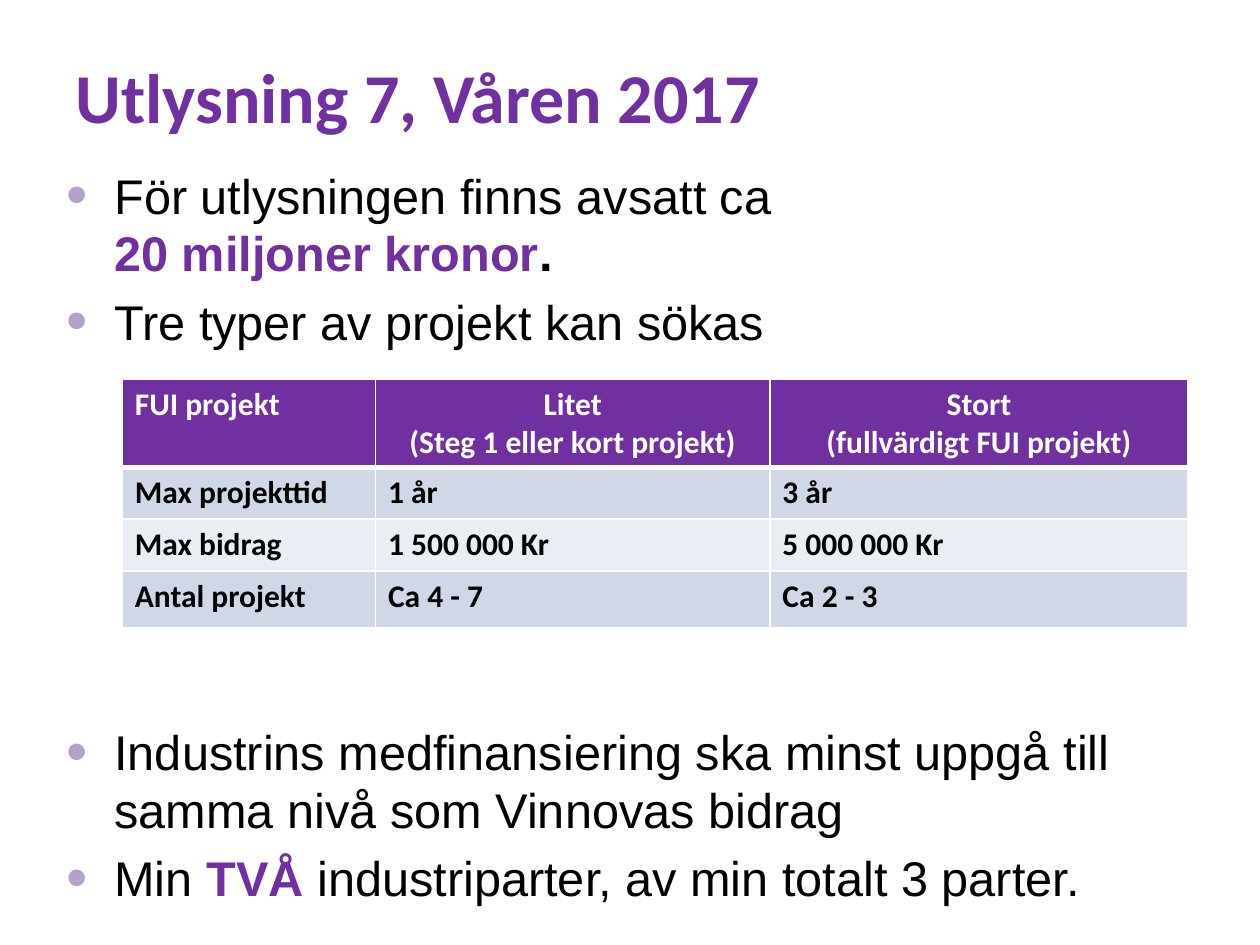
from lxml import etree
from pptx import Presentation
from pptx.dml.color import RGBColor
from pptx.enum.text import MSO_ANCHOR as ANCHOR, PP_ALIGN as ALIGN
from pptx.oxml.ns import qn
from pptx.util import Inches, Pt

COLS, ROWS = 100, 75
PURPLE, LILAC, BLACK, WHITE = "7030A0", "B3A2C7", "000000", "FFFFFF"
BANDS = ["D0D8E8", "E9EDF4"]


def color(value):
    return RGBColor.from_string(value)


def add_text(p, text, size=18, font="Calibri", fill=BLACK, bold=False):
    for i, line in enumerate(text.split("\n")):
        if i:
            p.add_line_break()
        if line:
            r = p.add_run()
            r.text = line
            r.font.size, r.font.name, r.font.bold = Pt(size), font, bold
            r.font.color.rgb = color(fill)


def add_bullet(p, indent):
    pPr = p._p.get_or_add_pPr()
    pPr.set("marL", str(indent))
    pPr.set("indent", str(-indent))
    clr = etree.SubElement(pPr, qn("a:buClr"))
    etree.SubElement(clr, qn("a:srgbClr"), val=LILAC)
    etree.SubElement(pPr, qn("a:buSzPct"), val="125000")
    etree.SubElement(pPr, qn("a:buFont"), typeface="Arial")
    etree.SubElement(pPr, qn("a:buChar"), char="•")


def add_borders(cell, **widths):
    tcPr = cell._tc.get_or_add_tcPr()
    for side in "LRTB":
        ln = etree.SubElement(tcPr, qn(f"a:ln{side}"), w=str(Pt(widths.get(side, 1))))
        fill = etree.SubElement(ln, qn("a:solidFill"))
        etree.SubElement(fill, qn("a:srgbClr"), val=WHITE)


class Deck:
    def __init__(self, width=10, height=7.5):
        self.prs = Presentation()
        self.prs.slide_width, self.prs.slide_height = Inches(width), Inches(height)
        self.slide = self.prs.slides.add_slide(self.prs.slide_layouts[5])

    def x(self, cols):
        return round(self.prs.slide_width * cols / COLS)

    def y(self, rows):
        return round(self.prs.slide_height * rows / ROWS)

    def box(self, left, top, width, height):
        return self.x(left), self.y(top), self.x(width), self.y(height)

    def title(self, text, *place):
        sp = self.slide.shapes.title
        sp.left, sp.top, sp.width, sp.height = self.box(*place)
        tf = sp.text_frame
        tf.vertical_anchor = ANCHOR.MIDDLE
        p = tf.paragraphs[0]
        p.alignment = ALIGN.LEFT
        add_text(p, text, size=40, fill=PURPLE, bold=True)

    def bullets(self, items, *place):
        tf = self.slide.shapes.add_textbox(*self.box(*place)).text_frame
        tf.word_wrap = True
        for i, (gap, runs) in enumerate(items):
            p = tf.paragraphs[0] if i == 0 else tf.add_paragraph()
            add_bullet(p, self.x(3.8))
            p.line_spacing, p.space_before = Pt(33), Pt(gap)
            for text, fmt in runs:
                add_text(p, text, size=27.8, font="Arial", **fmt)

    def table(self, data, widths, heights, left, top):
        place = self.box(left, top, sum(widths), sum(heights))
        table = self.slide.shapes.add_table(len(data), len(widths), *place).table
        for col, width in zip(table.columns, widths):
            col.width = self.x(width)
        for i, (row, height) in enumerate(zip(data, heights)):
            table.rows[i].height = self.y(height)
            header = i == 0
            for j, paragraphs in enumerate(row):
                cell = table.cell(i, j)
                add_borders(cell, **({"B": 3} if header else {"T": 3} if i == 1 else {}))
                cell.fill.solid()
                cell.fill.fore_color.rgb = color(PURPLE if header else BANDS[(i - 1) % 2])
                tf = cell.text_frame
                for k, text in enumerate(paragraphs):
                    p = tf.paragraphs[0] if k == 0 else tf.add_paragraph()
                    p.alignment = ALIGN.CENTER if header and j else ALIGN.LEFT
                    add_text(p, text, fill=WHITE if header else BLACK, bold=True)


def main():
    strong = {"fill": PURPLE, "bold": True}
    deck = Deck()
    deck.bullets([
        (0, [("För utlysningen finns avsatt ca\n", {}), ("20 miljoner kronor", strong),
             (".", {"bold": True})]),
        (6, [("Tre typer av projekt kan sökas", {})]),
        (213, [("Industrins medfinansiering ska minst uppgå till samma nivå som "
                "Vinnovas bidrag", {})]),
        (6, [("Min ", {}), ("TVÅ ", strong),
             ("industriparter, av min totalt 3 parter.", {})]),
    ], 4.3, 12.7, 90, 56.6)
    deck.title("Utlysning 7, Våren 2017", 5, 3, 90, 9.1)
    deck.table([
        [["FUI projekt"], ["Litet\n(Steg 1 eller kort projekt)"],
         ["Stort", "(fullvärdigt FUI projekt)"]],
        [["Max projekttid"], ["1 år"], ["3 år"]],
        [["Max bidrag"], ["1 500 000 Kr"], ["5 000 000 Kr"]],
        [["Antal projekt"], ["Ca 4 - 7"], ["Ca 2 - 3"]],
    ], [20.1, 31.3, 33.2], [7, 4.1, 4.1, 4.5], 9.7, 30.1)
    deck.prs.save("out.pptx")


if __name__ == "__main__":
    main()
